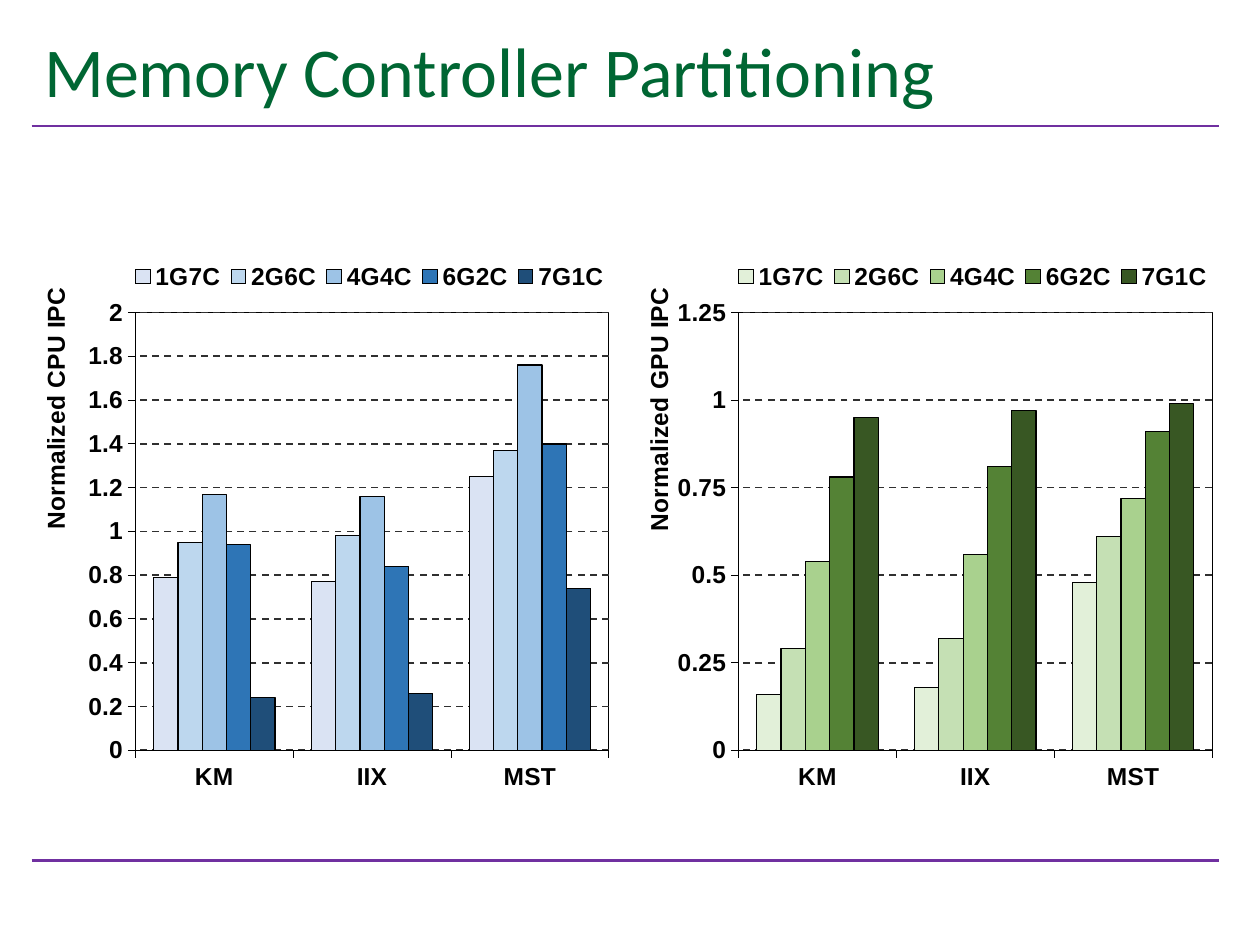
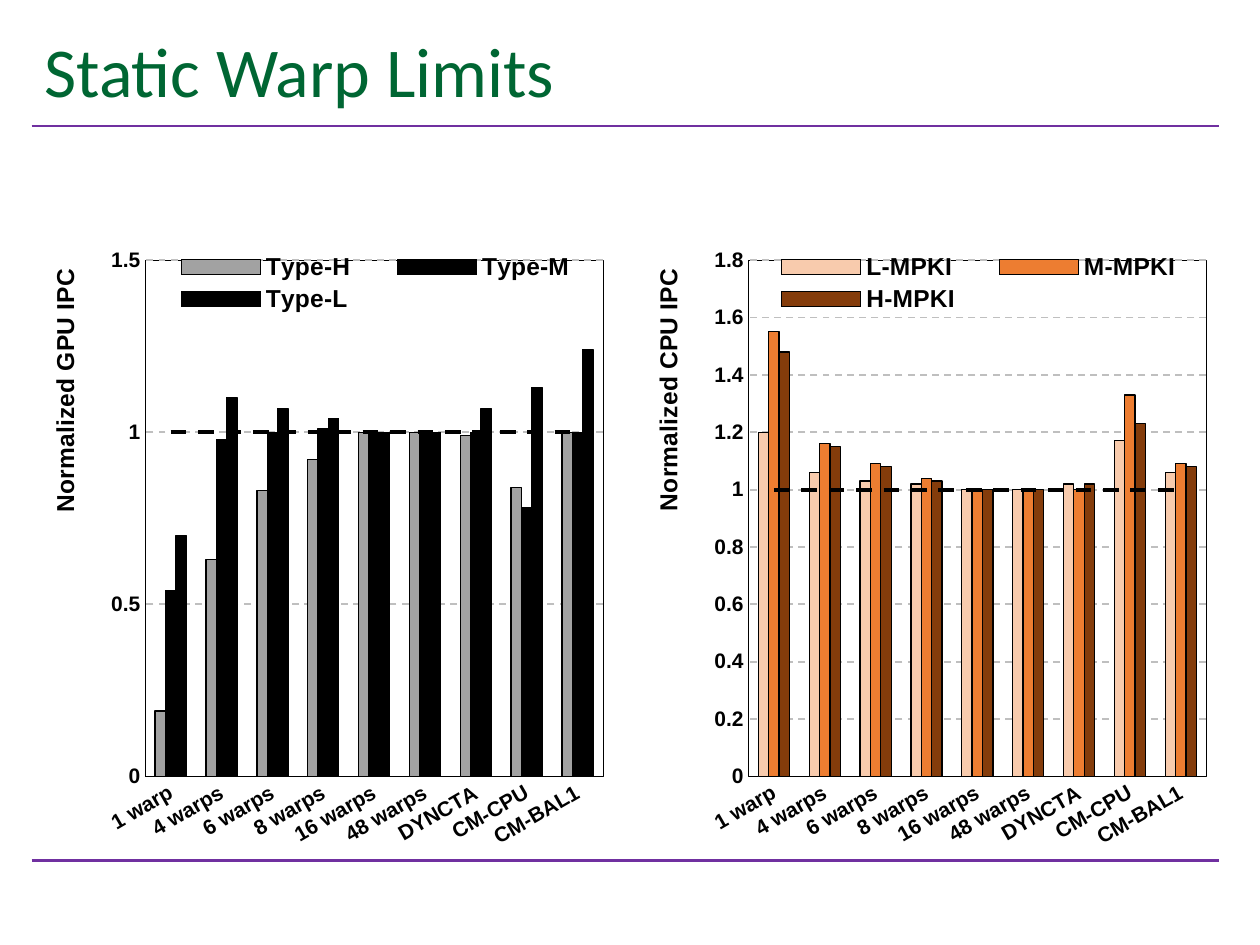
from pptx import Presentation
from pptx.chart.data import CategoryChartData
from pptx.dml.color import RGBColor
from pptx.enum import chart as ec, dml, shapes, text
from pptx.oxml import parse_xml
from pptx.oxml.ns import nsdecls, qn
from pptx.util import Cm, Pt

GREEN, PURPLE, BLACK = "006633", "7030A0", "000000"
LEFT, WIDTH = 0.64, 23.93
RULES_Y = (2.54, 17.35)
CHART_X = (LEFT, 12.8)
CHART_TOP, CHART_W, CHART_H = 3.81, 11.74, 13.54

MIXES = ["1G7C", "2G6C", "4G4C", "6G2C", "7G1C"]
APPS = ["KM", "IIX", "MST"]
LIMITS = ["1 warp", "4 warps", "6 warps", "8 warps", "16 warps", "48 warps",
          "DYNCTA", "CM-CPU", "CM-BAL1"]

PARTITION_STYLE = {
    "cats": APPS, "gap": 150, "tick": ec.XL_TICK_MARK.OUTSIDE, "label_size": 14,
    "cat_line": 0.5, "val_line": 0.5, "grid": "303030", "baseline": False,
    "plot": (0.178, 0.184, 0.813, 0.652), "legend": (0.16, 0.11, 0.84, 0.04),
    "title_at": (0.006, 0.14),
}
WARP_STYLE = {
    "cats": LIMITS, "gap": 190, "tick": ec.XL_TICK_MARK.NONE, "label_size": 12,
    "cat_line": 0.75, "val_line": None, "grid": "BFBFBF", "baseline": True,
    "plot": (0.195, 0.106, 0.786, 0.769), "legend": (0.19, 0.09, 0.8, 0.1),
    "title_at": (0.022, 0.112),
}

SLIDES = [
    ("Memory Controller Partitioning", PARTITION_STYLE, [
        ("Normalized CPU IPC", 2, 0.2, MIXES,
         ["DAE3F3", "BDD7EE", "9DC3E6", "2E75B6", "1F4E79"],
         [[0.79, 0.77, 1.25], [0.95, 0.98, 1.37], [1.17, 1.16, 1.76],
          [0.94, 0.84, 1.4], [0.24, 0.26, 0.74]]),
        ("Normalized GPU IPC", 1.25, 0.25, MIXES,
         ["E2F0D9", "C5E0B4", "A9D18E", "548235", "385723"],
         [[0.16, 0.18, 0.48], [0.29, 0.32, 0.61], [0.54, 0.56, 0.72],
          [0.78, 0.81, 0.91], [0.95, 0.97, 0.99]]),
    ]),
    ("Static Warp Limits", WARP_STYLE, [
        ("Normalized GPU IPC", 1.5, 0.5, ["Type-H", "Type-M", "Type-L"],
         ["A2A2A2", BLACK, BLACK],
         [[0.19, 0.63, 0.83, 0.92, 1, 1, 0.99, 0.84, 1],
          [0.54, 0.98, 1, 1.01, 1, 1, 1, 0.78, 1],
          [0.7, 1.1, 1.07, 1.04, 1, 1, 1.07, 1.13, 1.24]]),
        ("Normalized CPU IPC", 1.8, 0.2, ["L-MPKI", "M-MPKI", "H-MPKI"],
         ["F8CBAD", "ED7D31", "843C0B"],
         [[1.2, 1.06, 1.03, 1.02, 1, 1, 1.02, 1.17, 1.06],
          [1.55, 1.16, 1.09, 1.04, 1, 1, 1, 1.33, 1.09],
          [1.48, 1.15, 1.08, 1.03, 1, 1, 1.02, 1.23, 1.08]]),
    ]),
]


def rgb(hex_color):
    return RGBColor.from_string(hex_color)


def assign(obj, values):
    for name, value in values.items():
        setattr(obj, name, value)


def set_font(font, size, color=BLACK, name="Arial", bold=True):
    assign(font, {"size": Pt(size), "name": name, "bold": bold})
    font.color.rgb = rgb(color)


def set_line(line, color, width, dash=None):
    line.color.rgb = rgb(color)
    assign(line, {"width": Pt(width), "dash_style": dash})


def add_rule(s, y):
    rule = s.shapes.add_connector(shapes.MSO_CONNECTOR.STRAIGHT,
                                  Cm(LEFT), Cm(y), Cm(LEFT + WIDTH), Cm(y))
    set_line(rule.line, PURPLE, 1.5)
    rule.element.spPr.append(parse_xml(f"<a:effectLst {nsdecls('a')}/>"))


def add_slide(prs, title):
    s = prs.slides.add_slide(prs.slide_layouts[5])
    for y in RULES_Y:
        add_rule(s, y)
    sp = s.shapes.title
    assign(sp, {"left": Cm(LEFT), "top": Cm(0.43), "width": Cm(WIDTH), "height": Cm(2.11)})
    tf = sp.text_frame
    assign(tf, {"text": title, "word_wrap": True, "auto_size": text.MSO_AUTO_SIZE.NONE,
                "vertical_anchor": text.MSO_ANCHOR.MIDDLE, "margin_bottom": Cm(0.29)})
    p = tf.paragraphs[0]
    p.alignment = text.PP_ALIGN.LEFT
    set_font(p.runs[0].font, 40, GREEN, "Calibri", False)
    return s


def place(part, box, inner=False):
    for old in part.findall(qn("c:layout")):
        part.remove(old)
    target = '<c:layoutTarget val="inner"/>' if inner else ""
    modes = '<c:xMode val="edge"/><c:yMode val="edge"/>'
    sizes = "".join(f'<c:{k} val="{v}"/>' for k, v in zip("xywh", box))
    layout = parse_xml(f"<c:layout {nsdecls('c')}><c:manualLayout>{target}{modes}{sizes}"
                       "</c:manualLayout></c:layout>")
    overlay = part.find(qn("c:overlay"))
    part.insert(0 if overlay is None else part.index(overlay), layout)


def format_axes(chart, title, top, step, style):
    cat, val = chart.category_axis, chart.value_axis
    for axis, width in ((cat, style["cat_line"]), (val, style["val_line"])):
        assign(axis, {"major_tick_mark": style["tick"],
                      "minor_tick_mark": ec.XL_TICK_MARK.NONE})
        set_font(axis.tick_labels.font, style["label_size"])
        if width:
            set_line(axis.format.line, BLACK, width)
        else:
            axis.format.line.fill.background()
    assign(val, {"minimum_scale": 0, "maximum_scale": top, "major_unit": step,
                 "has_major_gridlines": True})
    set_line(val.major_gridlines.format.line, style["grid"], 1, dml.MSO_LINE.DASH)
    tf = val.axis_title.text_frame
    tf.text = title
    set_font(tf.paragraphs[0].runs[0].font, 14)
    title_xml = chart.element.xpath("//c:valAx/c:title")[0]
    title_xml.xpath(".//a:bodyPr")[0].set("rot", "-5400000")
    place(title_xml, style["title_at"])


def add_legend(chart, box):
    chart.has_legend = True
    assign(chart.legend, {"position": ec.XL_LEGEND_POSITION.TOP, "include_in_layout": False})
    set_font(chart.legend.font, 14)
    place(chart.element.xpath("//c:legend")[0], box)


def add_baseline(chart, index):
    root = chart.element
    bars = root.xpath("//c:barChart")[0]
    ser = bars.findall(qn("c:ser"))[index]
    for tag in ("c:invertIfNegative", "c:spPr"):
        for child in ser.findall(qn(tag)):
            ser.remove(child)
    ids = "".join(f'<c:axId val="{a.get("val")}"/>' for a in bars.findall(qn("c:axId")))
    lines = parse_xml(f'<c:lineChart {nsdecls("c")}><c:grouping val="standard"/>'
                      f'<c:varyColors val="0"/><c:marker val="1"/>{ids}</c:lineChart>')
    lines.insert(2, ser)
    bars.addnext(lines)
    line = chart.plots[1].series[0]
    line.smooth = False
    line.marker.style = ec.XL_MARKER_STYLE.NONE
    set_line(line.format.line, BLACK, 2.25, dml.MSO_LINE.DASH)
    root.xpath("//c:legendPos")[0].addnext(parse_xml(
        f'<c:legendEntry {nsdecls("c")}><c:idx val="{index}"/><c:delete val="1"/></c:legendEntry>'))
    root.xpath("//c:catAx/c:txPr/a:bodyPr")[0].set("rot", "-1800000")


def add_bar_chart(s, x, style, title, top, step, names, colors, rows):
    data = CategoryChartData()
    data.categories = style["cats"]
    for name, row in zip(names, rows):
        data.add_series(name, row)
    if style["baseline"]:
        data.add_series("Series 4", [1] * len(style["cats"]))
    chart = s.shapes.add_chart(ec.XL_CHART_TYPE.COLUMN_CLUSTERED, Cm(x), Cm(CHART_TOP),
                               Cm(CHART_W), Cm(CHART_H), data).chart
    chart.has_title = False
    set_font(chart.font, 14)
    plot = chart.plots[0]
    assign(plot, {"gap_width": style["gap"], "overlap": 0, "vary_by_categories": False})
    for ser, color in zip(plot.series, colors):
        ser.format.fill.solid()
        ser.format.fill.fore_color.rgb = rgb(color)
        set_line(ser.format.line, BLACK, 0.75)
    format_axes(chart, title, top, step, style)
    add_legend(chart, style["legend"])
    if style["baseline"]:
        add_baseline(chart, len(names))
    area = chart.element.xpath("//c:plotArea")[0]
    place(area, style["plot"], inner=True)
    area.append(parse_xml(
        f'<c:spPr {nsdecls("c", "a")}><a:noFill/><a:ln w="{Pt(0.5)}"><a:solidFill>'
        f'<a:srgbClr val="{BLACK}"/></a:solidFill></a:ln></c:spPr>'))


def main():
    prs = Presentation()
    assign(prs, {"slide_width": Cm(25.4), "slide_height": Cm(19.05)})
    for title, style, charts in SLIDES:
        s = add_slide(prs, title)
        for x, chart in zip(CHART_X, charts):
            add_bar_chart(s, x, style, *chart)
    prs.save("out.pptx")


if __name__ == "__main__":
    main()
